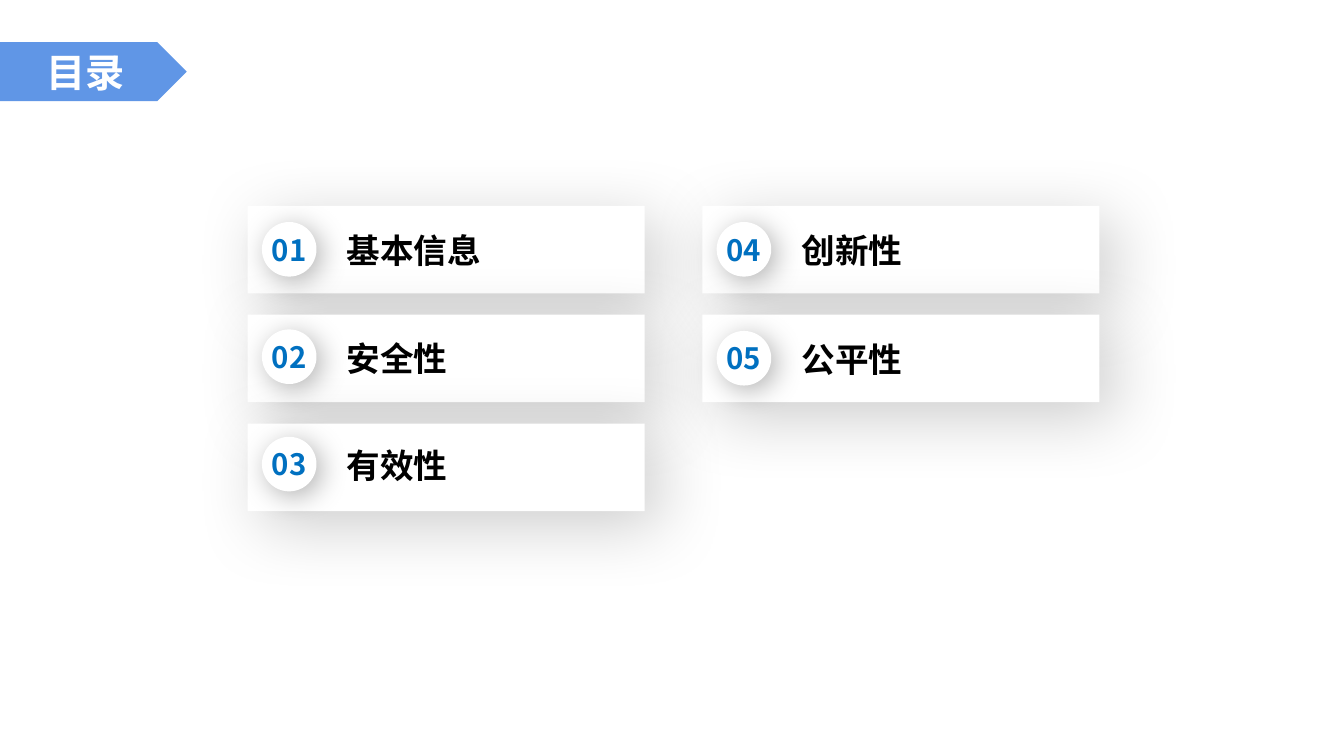
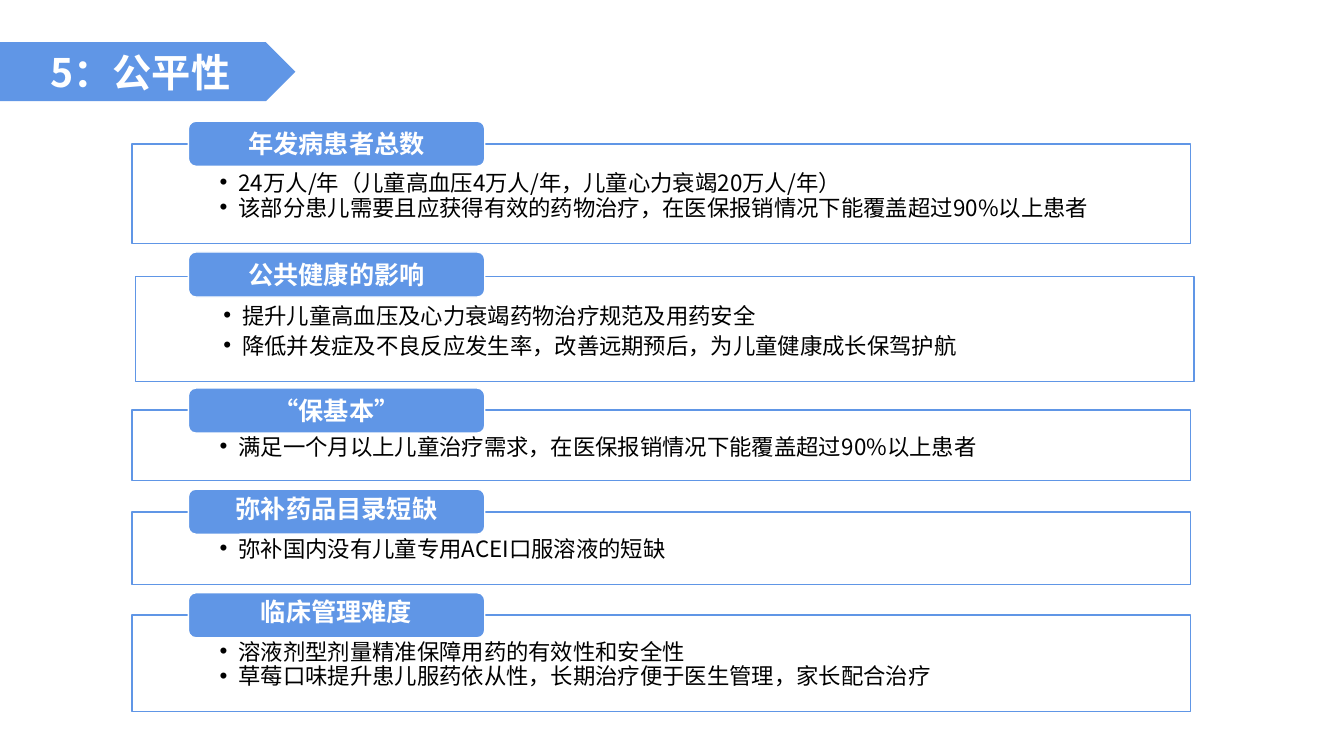
from copy import deepcopy
from dataclasses import dataclass

from lxml.etree import SubElement as Sub
from pptx import Presentation
from pptx.dml.color import RGBColor as RGB
from pptx.enum.shapes import MSO_SHAPE as Kind
from pptx.enum.text import MSO_ANCHOR as Anchor
from pptx.enum.text import MSO_AUTO_SIZE as Fit
from pptx.enum.text import PP_ALIGN as Align
from pptx.oxml.ns import qn
from pptx.util import Pt


@dataclass(frozen=True)
class Theme:
    font: str = "Noto Sans CJK SC"
    blue: str = "6096E6"
    deep: str = "0070C0"
    white: str = "FFFFFF"
    black: str = "000000"
    title: int = 28
    label: int = 24
    num: int = 21
    tab: int = 18
    body: int = 16


T = Theme()

TOPICS = [["基本信息", "安全性", "有效性"], ["创新性", "公平性"]]

# Heading, heading spacing, tab top, panel left, top, height, (line, spacing) items
PANELS = [
    ("年发病患者总数", 1, 86.6, 94.3, 102.8, 71.3, [
        ("24万人/年（儿童高血压4万人/年，儿童心力衰竭20万人/年）", 0.8),
        ("该部分患儿需要且应获得有效的药物治疗，在医保报销情况下能覆盖超过90%以上患者", 0.8)]),
    ("公共健康的影响", 1, 180, 97, 197.7, 74.9, [
        ("提升儿童高血压及心力衰竭药物治疗规范及用药安全", 0.8),
        ("降低并发症及不良反应发生率，改善远期预后，为儿童健康成长保驾护航", 1)]),
    ("“保基本”", 1, 277.2, 94.3, 293, 50.4, [
        ("满足一个月以上儿童治疗需求，在医保报销情况下能覆盖超过90%以上患者", 0.7)]),
    ("弥补药品目录短缺", 0.7, 349.4, 94.3, 365.6, 51.8, [
        ("弥补国内没有儿童专用ACEI口服溶液的短缺", 0.7)]),
    ("临床管理难度", 0.7, 423.4, 94.3, 439.2, 69.1, [
        ("溶液剂型剂量精准保障用药的有效性和安全性", 0.7),
        ("草莓口味提升患儿服药依从性，长期治疗便于医生管理，家长配合治疗", 0.8)]),
]


def place(item, x, y, w, h):
    item.left, item.top, item.width, item.height = Pt(x), Pt(y), Pt(w), Pt(h)


def paint(item, fill, line=None):
    item.fill.solid()
    item.fill.fore_color.rgb = RGB.from_string(fill)
    if line:
        item.line.color.rgb = RGB.from_string(line)
        item.line.width = Pt(1)
    else:
        item.line.fill.background()


def shape(slide, kind, box, fill, line=None):
    item = slide.shapes.add_shape(kind, *map(Pt, box))
    item.shadow.inherit = False
    paint(item, fill, line)
    return item


def shade(item, alpha, blur, dist):
    """Give a shape a soft black shadow towards the lower right."""
    fx = item.element.spPr.find(qn("a:effectLst"))
    cast = Sub(fx, qn("a:outerShdw"), blurRad=str(Pt(blur)), dist=str(Pt(dist)),
               dir=str(45 * 60000), algn="tl", rotWithShape="0")
    tone = Sub(cast, qn("a:srgbClr"), val=T.black)
    Sub(tone, qn("a:alpha"), val=str(alpha * 1000))


def bullet(par, hang):
    prop = par._p.get_or_add_pPr()
    prop.set("marL", str(Pt(hang)))
    prop.set("indent", str(-Pt(hang)))
    Sub(prop, qn("a:buFont"), typeface="Arial")
    Sub(prop, qn("a:buChar"), char="•")


def write(item, lines, size, color=T.black, bold=False, align=Align.CENTER,
          anchor=Anchor.MIDDLE, inset=(0, 0, 0, 0), wrap=True, hang=0, after=0):
    """Fill a shape with (text, line spacing) pairs, or with one plain text."""
    frame = item.text_frame
    frame.word_wrap, frame.auto_size = wrap, Fit.NONE
    frame.vertical_anchor = anchor
    (frame.margin_left, frame.margin_top,
     frame.margin_right, frame.margin_bottom) = map(Pt, inset)
    if isinstance(lines, str):
        lines = [(lines, 1)]
    for i, (text, gap) in enumerate(lines):
        par = frame.add_paragraph() if i else frame.paragraphs[0]
        par.alignment, par.line_spacing = align, float(gap)
        par.space_before, par.space_after = Pt(0), Pt(after)
        if hang:
            bullet(par, hang)
        run = par.add_run()
        run.text = text
        font = run.font
        font.name, font.size, font.bold = T.font, Pt(size), bold
        font.color.rgb = RGB.from_string(color)
        Sub(run._r.get_or_add_rPr(), qn("a:ea"), typeface=T.font)


def banner(slide, text, wide):
    """Arrow band at the left edge, with the slide title on it."""
    top, high = 30.2, 42
    band = shape(slide, Kind.PENTAGON, (0, top, wide, high), T.blue)
    title = slide.shapes.title
    title.element.addprevious(band.element)
    place(title, 0, top, wide - high / 4, high)
    write(title, text, T.title, T.white, bold=True)


def label(slide, x, y, num, text):
    """Round number with its topic, inside the card at x, y."""
    disc = shape(slide, Kind.OVAL, (x + 10.2, y + 11.6, 39, 39), T.white)
    shade(disc, 30, 20, 5)
    write(disc, f"{num:02}", T.num, T.deep, bold=True, wrap=False)
    name = slide.shapes.add_textbox(Pt(x + 63.7), Pt(y + 14), Pt(112), Pt(36))
    write(name, text, T.label, bold=True, align=Align.LEFT, anchor=Anchor.TOP,
          inset=(7.2, 3.6, 7.2, 3.6), wrap=False)


def agenda(slide, x, y):
    """Columns of cards, then their labels above every shadow."""
    step, pitch = 324.8, 77.8
    spots = [(x + c * step, y + r * pitch, text)
             for c, col in enumerate(TOPICS) for r, text in enumerate(col)]
    for left, top, _ in spots:
        card = shape(slide, Kind.RECTANGLE, (left, top, 283.6, 62.6), T.white)
        shade(card, 20, 50, 15)
    for num, (left, top, text) in enumerate(spots, 1):
        # The first column's labels sit slightly closer together
        lift = (num - 1) * 1.1 if left == x else 0
        label(slide, left, top - lift, num, text)


def panel(slide, body, head, gap, top, x, y, h, lines):
    """Outlined list with a heading tab over its upper edge."""
    place(body, x, y, 756, h)
    paint(body, T.white, T.blue)
    write(body, lines, T.body, align=Align.LEFT, anchor=Anchor.TOP,
          inset=(62.6, 21.6, 62.6, 8.6), hang=13.5, after=2.4)
    tab = shape(slide, Kind.ROUNDED_RECTANGLE, (134.6, top, 211.7, 32.2),
                T.blue, T.white)
    write(tab, [(head, gap)], T.tab, T.white, bold=True)


def extend(layout, count):
    """Give the layout as many body placeholders as there are lists."""
    base = layout.placeholders[1].element
    for n in range(1, count):
        twin = deepcopy(base)
        twin.xpath(".//p:ph")[0].set("idx", str(20 + n))
        twin.xpath(".//p:cNvPr")[0].set("id", str(20 + n))
        base.getparent().append(twin)


def main():
    deck = Presentation()
    deck.slide_width, deck.slide_height = Pt(960), Pt(540)

    # Contents
    slide = deck.slides.add_slide(deck.slide_layouts[5])
    banner(slide, "目录", 133.4)
    agenda(slide, 176.9, 147)

    # Fairness
    layout = deck.slide_layouts[1]
    extend(layout, len(PANELS))
    slide = deck.slides.add_slide(layout)
    bodies = list(slide.placeholders)[1:]
    banner(slide, "5：公平性", 211)
    for body, row in zip(bodies, PANELS):
        panel(slide, body, *row)

    deck.save("out.pptx")


if __name__ == "__main__":
    main()
